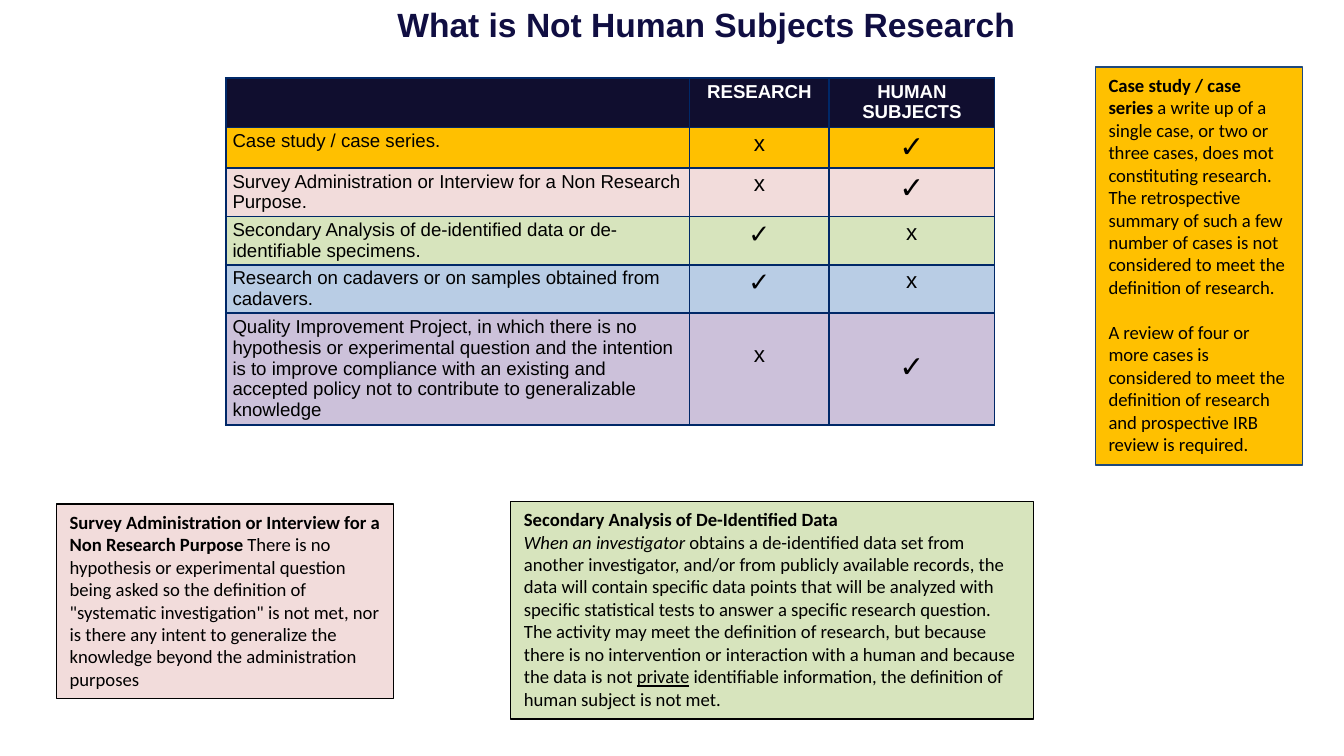
"""Build the slide on what is not human subjects research."""
from lxml import etree
from pptx import Presentation
from pptx.dml.color import RGBColor
from pptx.enum.shapes import MSO_SHAPE
from pptx.enum.text import MSO_ANCHOR, MSO_AUTO_SIZE, PP_ALIGN
from pptx.oxml.ns import qn
from pptx.util import Inches, Pt

LEFT, CENTER = PP_ALIGN.LEFT, PP_ALIGN.CENTER
TOP = MSO_ANCHOR.TOP
NO_AUTOFIT = MSO_AUTO_SIZE.NONE
RECTANGLE = MSO_SHAPE.RECTANGLE

BLACK = RGBColor(0x00, 0x00, 0x00)
WHITE = RGBColor(0xFF, 0xFF, 0xFF)
TITLE_NAVY = RGBColor(0x10, 0x0E, 0x42)
HEADER_NAVY = RGBColor(0x10, 0x0E, 0x2F)
BORDER_BLUE = RGBColor(0x00, 0x28, 0x68)
OUTLINE_BLUE = RGBColor(0x1F, 0x49, 0x7D)
GOLD = RGBColor(0xFF, 0xC0, 0x00)
PINK = RGBColor(0xF2, 0xDC, 0xDB)
GREEN = RGBColor(0xD7, 0xE4, 0xBD)
BLUE = RGBColor(0xB9, 0xCD, 0xE5)
PURPLE = RGBColor(0xCC, 0xC1, 0xDA)


def add_text(paragraph, text, font="Arial", size=10, color=BLACK, bold=False,
             italic=False, underline=False, align=LEFT):
    paragraph.alignment = align
    run = paragraph.add_run()
    run.text = text
    run.font.name = font
    run.font.size = Pt(size)
    run.font.color.rgb = color
    run.font.bold = bold
    run.font.italic = italic
    run.font.underline = underline


def add_borders(cell, color, width):
    properties = cell._tc.get_or_add_tcPr()
    for index, side in enumerate(("a:lnL", "a:lnR", "a:lnT", "a:lnB")):
        line = etree.Element(qn(side), w=str(Pt(width)))
        fill = etree.SubElement(line, qn("a:solidFill"))
        etree.SubElement(fill, qn("a:srgbClr"), val=str(color))
        properties.insert(index, line)


presentation = Presentation()
presentation.slide_width = Inches(10)
presentation.slide_height = Inches(10) * 9 // 16
slide = presentation.slides.add_slide(presentation.slide_layouts[5])

title = slide.shapes.title
title.left, title.top = Inches(0.79), Inches(-0.02)
title.width, title.height = Inches(9), Inches(0.49)
title.text_frame.auto_size = NO_AUTOFIT
title.text_frame.vertical_anchor = TOP
add_text(title.text_frame.paragraphs[0], "What is Not Human Subjects Research ",
         size=18, color=TITLE_NAVY, bold=True, align=CENTER)

column_widths = [3.45, 1.04, 1.23]
table_rows = [
    (0.37, HEADER_NAVY, ["", "RESEARCH", "HUMAN SUBJECTS"], [10, 10, 10]),
    (0.3, GOLD, ["Case study / case series.", "x", "✓"], [10, 12, 16]),
    (0.36, PINK, ["Survey Administration or Interview for a Non Research Purpose.",
                  "x", "✓"], [10, 12, 16]),
    (0.36, GREEN, ["Secondary Analysis of de-identified data or de-identifiable specimens.",
                   "✓", "x"], [10, 14, 12]),
    (0.36, BLUE, ["Research on cadavers or on samples obtained from cadavers.",
                  "✓", "x"], [10, 14, 12]),
    (0.83, PURPLE, ["Quality Improvement Project, in which there is no hypothesis or "
                    "experimental question and the intention is to improve compliance "
                    "with an existing and accepted policy not to contribute to "
                    "generalizable knowledge", "x", "✓"], [10, 12, 16]),
]
cell_side_margin = Inches(0.05)
cell_end_margin = cell_side_margin // 2
table = slide.shapes.add_table(len(table_rows), len(column_widths), Inches(1.68),
                               Inches(0.58), Inches(5.72), Inches(2.58)).table
for column, width in zip(table.columns, column_widths):
    column.width = Inches(width)
for row_index, (height, fill_color, texts, sizes) in enumerate(table_rows):
    table.rows[row_index].height = Inches(height)
    is_header = row_index == 0
    is_last = row_index == len(table_rows) - 1
    for column_index, (text, size) in enumerate(zip(texts, sizes)):
        cell = table.cell(row_index, column_index)
        cell.fill.solid()
        cell.fill.fore_color.rgb = fill_color
        add_borders(cell, BORDER_BLUE, 1)
        cell.margin_left = cell.margin_right = cell_side_margin
        cell.margin_top = cell.margin_bottom = cell_end_margin
        if is_last and column_index:
            cell.margin_top = cell_end_margin + Pt(size * 1.15)
        if text:
            add_text(cell.text_frame.paragraphs[0], text, size=size, bold=is_header,
                     color=WHITE if is_header else BLACK,
                     align=CENTER if column_index else LEFT)

bold, italic, underline = {"bold": True}, {"italic": True}, {"underline": True}
notes = [
    ((8.15, 0.5, 1.54, 2.96), GOLD, OUTLINE_BLUE, 12.2, [
        [("Case study / case series ", bold),
         ("a write up of a single case, or two or three cases, does mot constituting "
          "research. The retrospective summary of such a few number of cases is not "
          "considered to meet the definition of research.", {})],
        [("A review of four or more cases is considered to meet the definition of "
          "research and prospective IRB review is required.", {})]]),
    ((0.42, 3.75, 2.51, 1.45), PINK, BLACK, 0, [
        [("Survey Administration or Interview for a Non Research Purpose ", bold),
         ("There is no hypothesis or experimental question being asked so the "
          "definition of \"systematic investigation\" is not met, nor is there any "
          "intent to generalize the knowledge beyond the administration purposes", {})]]),
    ((3.8, 3.73, 3.89, 1.62), GREEN, BLACK, 0, [
        [("Secondary Analysis of De-Identified Data", bold)],
        [("When an investigator ", italic),
         ("obtains a de-identified data set from another investigator, and/or from "
          "publicly available records, the data will contain specific data points that "
          "will be analyzed with specific statistical tests to answer a specific "
          "research question.", {})],
        [("The activity may meet the definition of research, but because there is no "
          "intervention or interaction with a human and because the data is not ", {}),
         ("private", underline),
         (" identifiable information, the definition of human subject is not met.", {})]]),
]
for bounds, fill_color, line_color, gap, paragraphs in notes:
    note = slide.shapes.add_shape(RECTANGLE, *map(Inches, bounds))
    note.shadow.inherit = False
    note.fill.solid()
    note.fill.fore_color.rgb = fill_color
    note.line.color.rgb = line_color
    note.line.width = Pt(0.75)
    frame = note.text_frame
    frame.word_wrap = True
    frame.vertical_anchor = TOP
    for index, runs in enumerate(paragraphs):
        paragraph = frame.add_paragraph() if index else frame.paragraphs[0]
        if index and gap:
            paragraph.space_before = Pt(gap)
        for text, style in runs:
            add_text(paragraph, text, font="Calibri", **style)

presentation.save("out.pptx")
